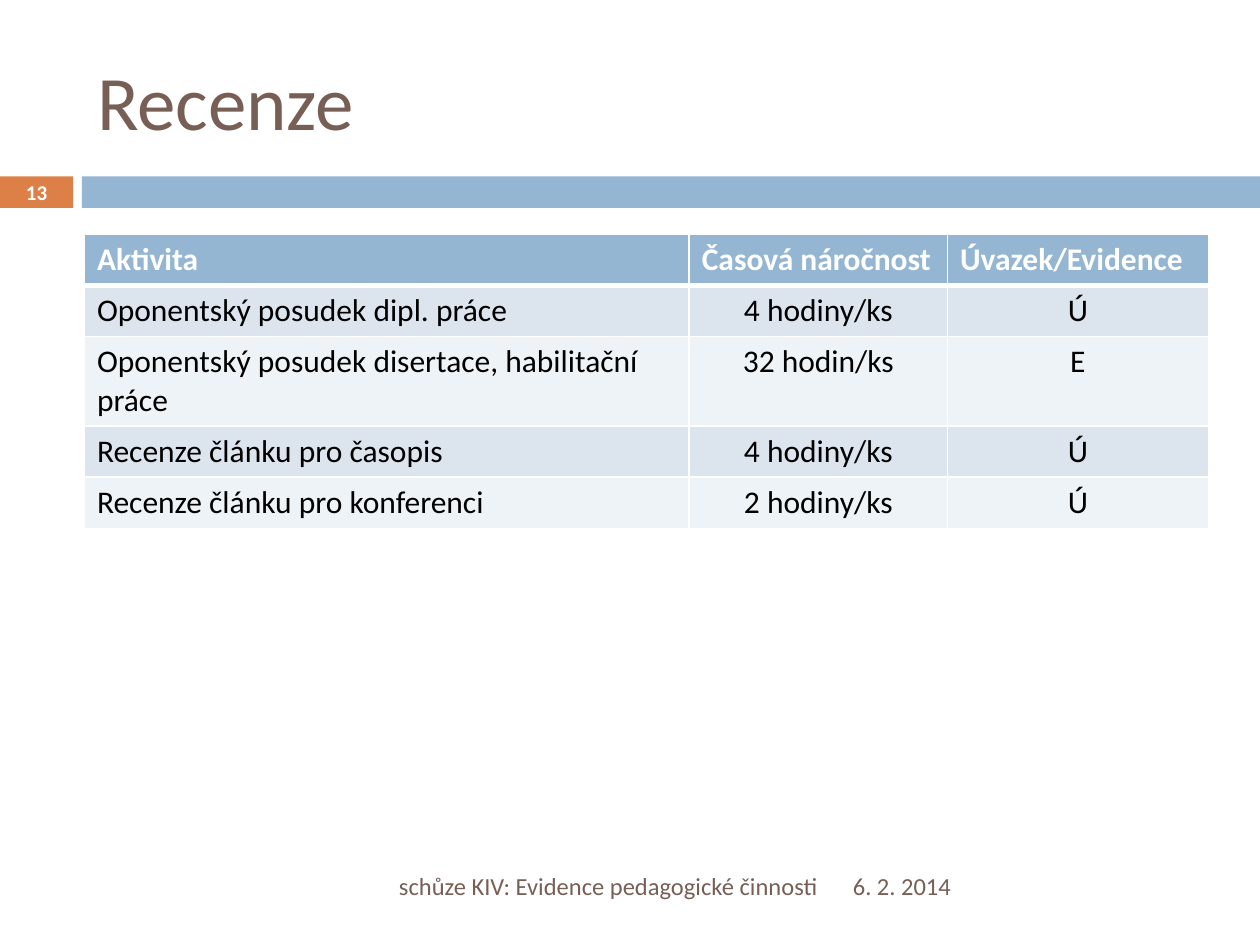
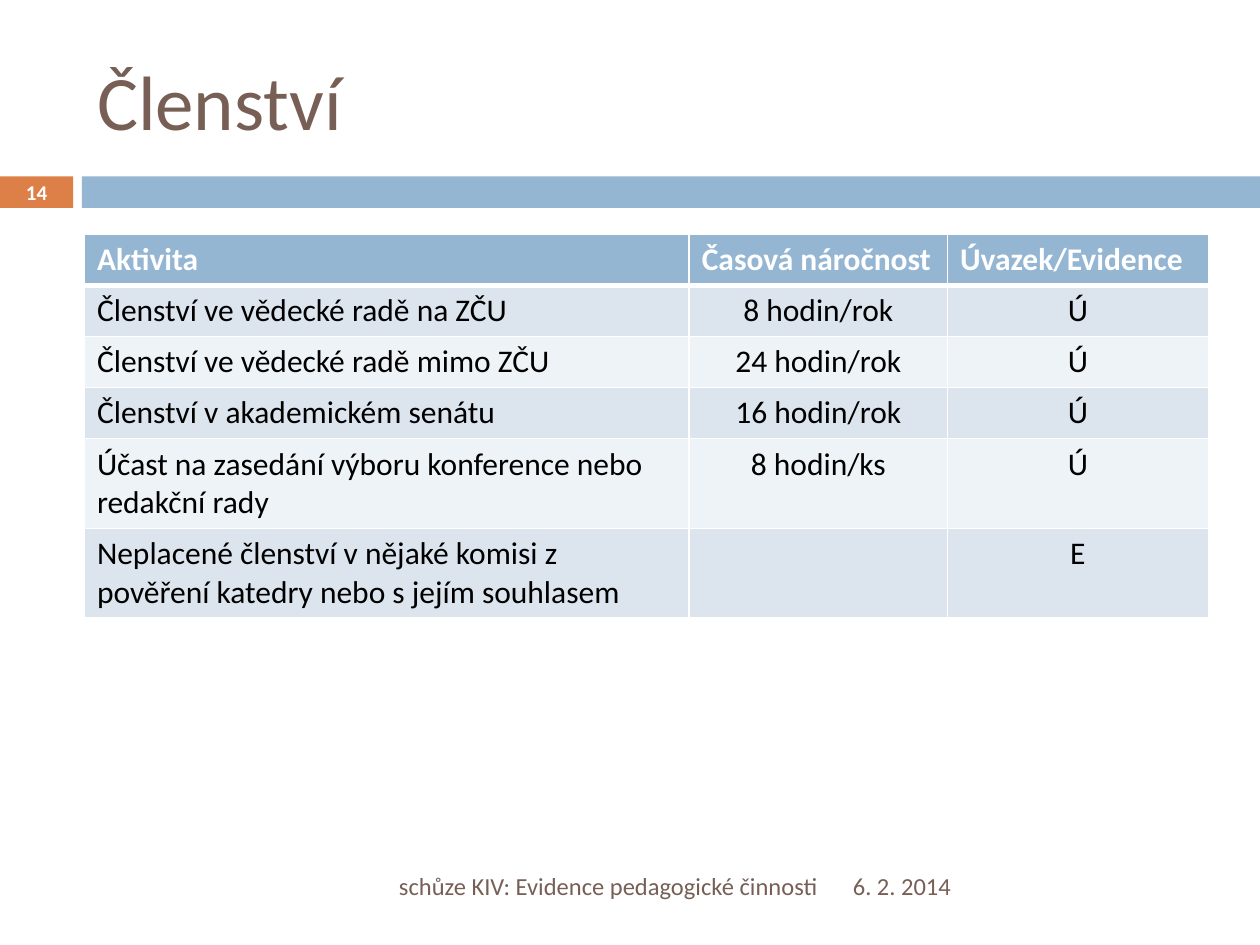
from lxml import etree
from pptx import Presentation
from pptx.dml.color import RGBColor
from pptx.enum import shapes, text
from pptx.oxml import ns
from pptx.util import Inches, Pt

FONT = "Calibri"
COLORS = {
    "brown": "775F55",
    "orange": "DD8047",
    "blue": "94B6D2",
    "row_dark": "DCE5EE",
    "row_light": "EEF3F7",
    "white": "FFFFFF",
    "black": "000000",
}

TITLE_BOX = (0.67, 0.25, 8.92, 1.08)
NUMBER_BOX = (0, 1.4, 0.58, 0.25)
BAND_BOX = (0.65, 1.4, 9.35, 0.25)
TABLE_BOX = (0.67, 1.86, 8.92, 0.4)
FOOTER_BOX = (0.67, 6.83, 8.92, 0.4)

FOOTER = "schůze KIV: Evidence pedagogické činnosti"
DATE = "6. 2. 2014"
HEADER = ("Aktivita", "Časová náročnost", "Úvazek/Evidence")
COLUMN_WIDTHS = (4.8, 2.05, 2.07)

SLIDES = [
    (13, "Recenze", [
        ("Oponentský posudek dipl. práce", "4 hodiny/ks", "Ú"),
        ("Oponentský posudek disertace, habilitační práce", "32 hodin/ks", "E"),
        ("Recenze článku pro časopis", "4 hodiny/ks", "Ú"),
        ("Recenze článku pro konferenci", "2 hodiny/ks", "Ú"),
    ]),
    (14, "Členství", [
        ("Členství ve vědecké radě na ZČU", "8 hodin/rok", "Ú"),
        ("Členství ve vědecké radě mimo ZČU", "24 hodin/rok", "Ú"),
        ("Členství v akademickém senátu", "16 hodin/rok", "Ú"),
        ("Účast na zasedání výboru konference nebo redakční rady", "8 hodin/ks", "Ú"),
        ("Neplacené členství v nějaké komisi z pověření katedry nebo s jejím souhlasem", "", "E"),
    ]),
]


def rgb(color):
    return RGBColor.from_string(COLORS[color])


def inches(box):
    return [Inches(length) for length in box]


def write_text(frame, content, size=18, color="black", bold=False, align="LEFT"):
    paragraph = frame.paragraphs[0]
    paragraph.alignment = getattr(text.PP_ALIGN, align)
    if not content:
        return
    run = paragraph.add_run()
    run.text = content
    run.font.name = FONT
    run.font.size = Pt(size)
    run.font.bold = bold
    run.font.color.rgb = rgb(color)


def add_text_box(slide, box, content, **style):
    frame = slide.shapes.add_textbox(*inches(box)).text_frame
    frame.word_wrap = True
    frame.vertical_anchor = text.MSO_ANCHOR.MIDDLE
    write_text(frame, content, **style)


def add_bar(slide, box, color):
    bar = slide.shapes.add_shape(shapes.MSO_SHAPE.RECTANGLE, *inches(box))
    bar.shadow.inherit = False
    bar.fill.solid()
    bar.fill.fore_color.rgb = rgb(color)
    bar.line.fill.background()
    return bar


def add_title(slide, box, content):
    title = slide.shapes.title
    title.left, title.top, title.width, title.height = inches(box)
    title.text_frame.vertical_anchor = text.MSO_ANCHOR.MIDDLE
    write_text(title.text_frame, content, size=44, color="brown")


def add_band(slide, number):
    add_bar(slide, BAND_BOX, "blue")
    frame = add_bar(slide, NUMBER_BOX, "orange").text_frame
    frame.margin_top = frame.margin_bottom = 0
    frame.vertical_anchor = text.MSO_ANCHOR.MIDDLE
    write_text(frame, str(number), size=12, color="white", bold=True, align="CENTER")


def add_footer(slide, box):
    left, top, width, height = box
    date_width = 2.92
    gap = 0.08
    footer_width = width - date_width - gap
    style = {"size": 14, "color": "brown"}
    add_text_box(slide, (left, top, footer_width, height), FOOTER, align="RIGHT", **style)
    add_text_box(slide, (left + width - date_width, top, date_width, height), DATE, **style)


def set_borders(cell, **widths):
    properties = cell._tc.get_or_add_tcPr()
    for side in "LRTB":
        line = etree.SubElement(properties, ns.qn(f"a:ln{side}"), w=str(Pt(widths.get(side, 1))))
        fill = etree.SubElement(line, ns.qn("a:solidFill"))
        etree.SubElement(fill, ns.qn("a:srgbClr"), val=COLORS["white"])


def format_cell(cell, content, row, column):
    if row == 0:
        set_borders(cell, B=3)
        fill = "blue"
        write_text(cell.text_frame, content, color="white", bold=True)
    else:
        set_borders(cell, T=3 if row == 1 else 1)
        fill = "row_dark" if row % 2 else "row_light"
        write_text(cell.text_frame, content, align="CENTER" if column else "LEFT")
    cell.fill.solid()
    cell.fill.fore_color.rgb = rgb(fill)


def add_activity_table(slide, box, activities):
    left, top, width, row_height = box
    rows = [HEADER, *activities]
    frame = slide.shapes.add_table(
        len(rows), len(HEADER), *inches((left, top, width, row_height * len(rows)))
    )
    table = frame.table
    for column, column_width in zip(table.columns, COLUMN_WIDTHS):
        column.width = Inches(column_width)
    for row, contents in enumerate(rows):
        for column, content in enumerate(contents):
            format_cell(table.cell(row, column), content, row, column)


def add_activity_slide(presentation, number, title, activities):
    slide = presentation.slides.add_slide(presentation.slide_layouts[5])
    add_band(slide, number)
    add_title(slide, TITLE_BOX, title)
    add_activity_table(slide, TABLE_BOX, activities)
    add_footer(slide, FOOTER_BOX)


def main():
    presentation = Presentation()
    presentation.slide_width = Inches(10)
    presentation.slide_height = Inches(7.5)
    for number, title, activities in SLIDES:
        add_activity_slide(presentation, number, title, activities)
    presentation.save("out.pptx")


if __name__ == "__main__":
    main()
